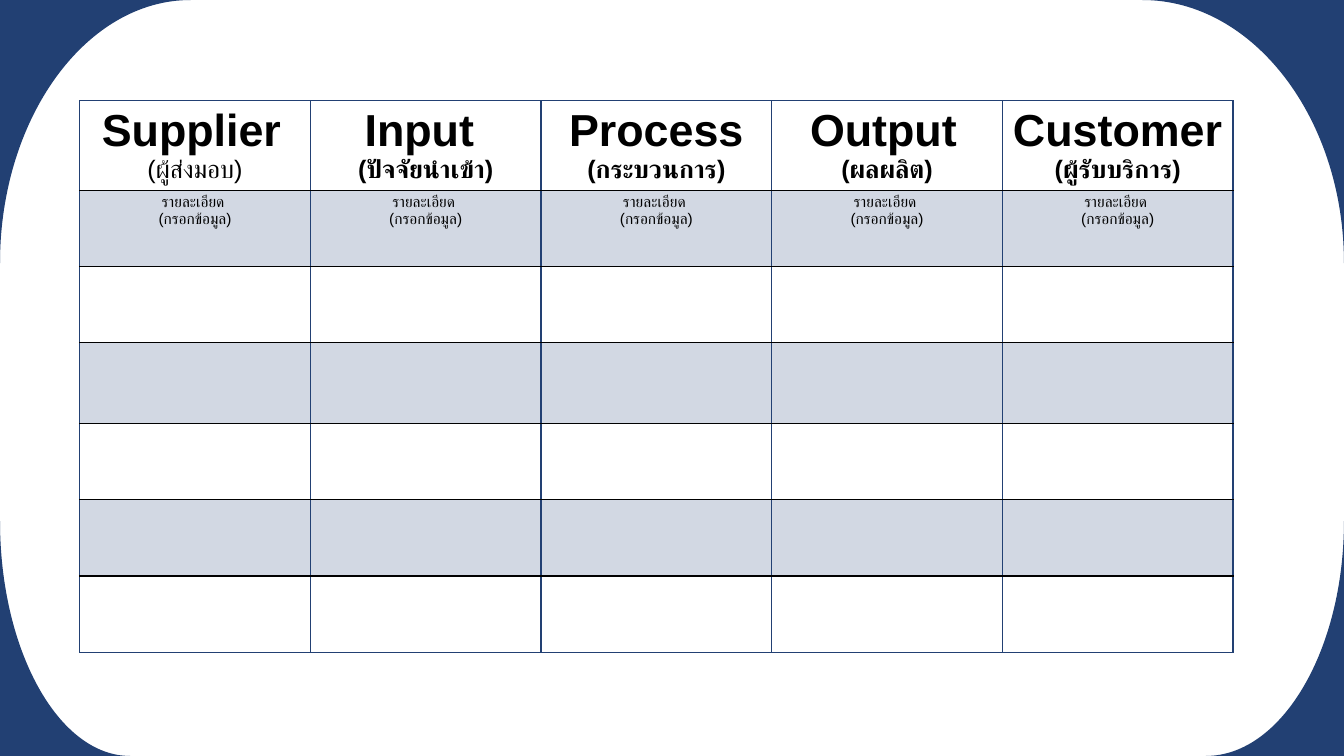
from copy import deepcopy

from lxml.etree import SubElement
from pptx import Presentation
from pptx.dml.color import RGBColor
from pptx.enum.text import PP_ALIGN
from pptx.oxml.ns import qn
from pptx.util import Inches, Pt

NAVY, BLACK = "224073", "000000"
WIDTH, HEIGHT = 13.33, 7.5
TABLE_WIDTH, TABLE_HEIGHT = 11.44, 5.47
HEADER_HEIGHT, MIDDLE_HEIGHT = 0.89, 0.8
ROUNDNESS = 0.55  # Bezier handle length that gives a quarter ellipse

# The header and one taller row; the other five share the rest equally
BODY_HEIGHT = (TABLE_HEIGHT - HEADER_HEIGHT - MIDDLE_HEIGHT) / 5
ROW_HEIGHTS = ([HEADER_HEIGHT] + [BODY_HEIGHT] * 2 + [MIDDLE_HEIGHT]
               + [BODY_HEIGHT] * 3)

# Each heading is a list of paragraphs, each a list of (text, size, bold)
HEADINGS = [
    [[("Supplier", 32, True), (" ", 18, True)], [("(ผู้ส่งมอบ)", 18, False)]],
    [[("Input \n", 32, True), ("(ปัจจัยนำเข้า)", 18, True)]],
    [[("Process", 32, True), (" (กระบวนการ)", 18, True)]],
    [[("Output", 32, True), (" \n(ผลผลิต)", 18, True)]],
    [[("Customer", 32, True), (" (ผู้รับบริการ)", 18, True)]],
]
DETAIL = [[("รายละเอียด \n(กรอกข้อมูล)", 11, False)]]


def color(value):
    return RGBColor.from_string(value)


def add_corner(page, x, y, width, height):
    """Fill the area between a slide corner and a quarter ellipse."""
    across = width if x == 0 else -width
    down = height if y == 0 else -height
    handle = 1 - ROUNDNESS
    outline = [(across, 0), (across * handle, 0), (0, down * handle), (0, down)]
    builder = page.shapes.build_freeform(Inches(x), Inches(y))
    builder.add_line_segments(
        [(Inches(x + dx), Inches(y + dy)) for dx, dy in outline], close=True)
    corner = builder.convert_to_shape()
    corner.shadow.inherit = False
    corner.fill.solid()
    corner.fill.fore_color.rgb = color(NAVY)
    corner.line.fill.background()

    # Join the last three points into one curve
    first, *others = list(corner._element.iter(qn("a:lnTo")))[1:4]
    first.tag = qn("a:cubicBezTo")
    for other in others:
        first.append(other[0])
        other.getparent().remove(other)


def add_text(para, text, size=18, bold=False, font="Arial", ink=BLACK):
    for index, line in enumerate(text.split("\n")):
        if index:
            # The break takes the format of the text before it
            para.add_line_break()
            para._p[-1].append(deepcopy(span._r.rPr))
        if line:
            span = para.add_run()
            span.text = line
            span.font.size, span.font.bold = Pt(size), bold
            span.font.name = font
            span.font.color.rgb = color(ink)


def fill_text(cell, paragraphs):
    frame = cell.text_frame
    for index, spans in enumerate(paragraphs):
        para = frame.add_paragraph() if index else frame.paragraphs[0]
        para.alignment = PP_ALIGN.CENTER
        for text, size, bold in spans:
            add_text(para, text, size=size, bold=bold)


def set_borders(cell, **sides):
    properties = cell._tc.get_or_add_tcPr()
    for side, ink in sides.items():
        line = SubElement(properties, qn("a:ln" + side), w=str(Pt(1)))
        fill = SubElement(line, qn("a:solidFill"))
        SubElement(fill, qn("a:srgbClr"), val=ink)


def set_fill(cell, shaded):
    if not shaded:
        cell.fill.background()
        return
    cell.fill.solid()
    cell.fill.fore_color.rgb = color(NAVY)
    tint = cell._tc.tcPr.find(qn("a:solidFill")).find(qn("a:srgbClr"))
    SubElement(tint, qn("a:alpha"), val="20000")


def add_sipoc_table(page):
    rows, columns = len(ROW_HEIGHTS), len(HEADINGS)
    table = page.shapes.add_table(
        rows, columns, Inches(0.79), Inches(1),
        Inches(TABLE_WIDTH), Inches(TABLE_HEIGHT)).table
    table.first_row = table.horz_banding = False
    for index, height in enumerate(ROW_HEIGHTS):
        table.rows[index].height = Inches(height)
        top = NAVY if index == 0 else BLACK
        bottom = NAVY if index == rows - 1 else BLACK
        for cell in table.rows[index].cells:
            set_borders(cell, L=NAVY, R=NAVY, T=top, B=bottom)
            set_fill(cell, shaded=index % 2 == 1)
    for index, heading in enumerate(HEADINGS):
        fill_text(table.cell(0, index), heading)
        fill_text(table.cell(1, index), DETAIL)


def main():
    deck = Presentation()
    deck.slide_width, deck.slide_height = Inches(WIDTH), Inches(HEIGHT)
    page = deck.slides.add_slide(deck.slide_layouts[6])

    # Rounded navy corners
    add_corner(page, WIDTH, 0, 2, 2.61)
    add_corner(page, WIDTH, HEIGHT, 1.37, 2.33)
    add_corner(page, 0, 0, 1.89, 2.61)
    add_corner(page, 0, HEIGHT, 1.29, 2.33)

    # Form with five columns
    add_sipoc_table(page)
    deck.save("out.pptx")


if __name__ == "__main__":
    main()
